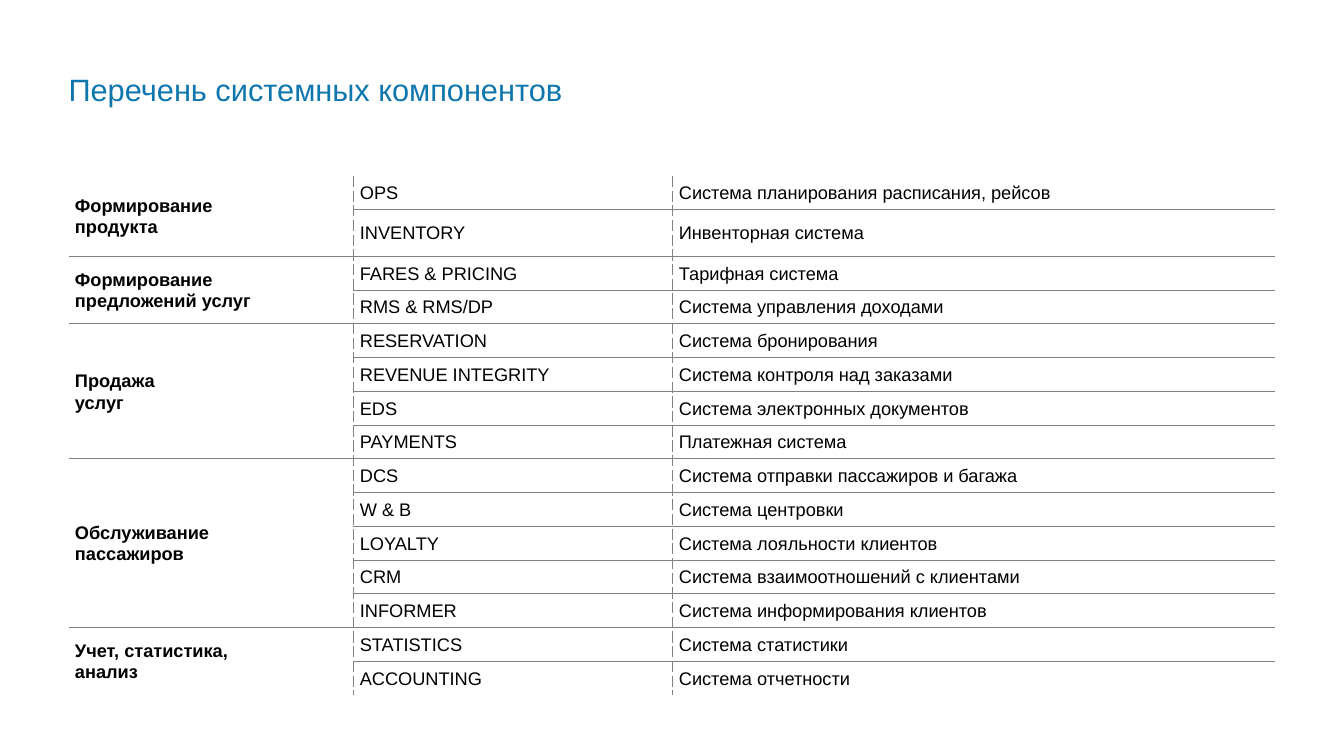
from lxml import etree
from pptx import Presentation
from pptx.dml.color import RGBColor
from pptx.enum import text
from pptx.oxml import ns
from pptx.util import Cm, Pt

TITLE = "Перечень системных компонентов"
GROUPS = [
    ("Формирование \nпродукта", [
        ("OPS", "Система планирования расписания, рейсов"),
        ("INVENTORY", "Инвенторная система"),
    ]),
    ("Формирование \nпредложений услуг", [
        ("FARES & PRICING", "Тарифная система"),
        ("RMS & RMS/DP", "Система управления доходами"),
    ]),
    ("Продажа \nуслуг", [
        ("RESERVATION", "Система бронирования"),
        ("REVENUE INTEGRITY", "Система контроля над заказами"),
        ("EDS", "Система электронных документов"),
        ("PAYMENTS", "Платежная система"),
    ]),
    ("Обслуживание \nпассажиров", [
        ("DCS", "Система отправки пассажиров и багажа"),
        ("W & B", "Система центровки"),
        ("LOYALTY", "Система лояльности клиентов"),
        ("CRM", "Система взаимоотношений с клиентами"),
        ("INFORMER", "Система информирования клиентов"),
    ]),
    ("Учет, статистика, \nанализ", [
        ("STATISTICS", "Система статистики"),
        ("ACCOUNTING", "Система отчетности"),
    ]),
]

FONT = "Arial"
BLUE = RGBColor(0x0F, 0x77, 0xAD)
BLACK = RGBColor(0, 0, 0)
WHITE = RGBColor(0xFF, 0xFF, 0xFF)
GREY = RGBColor(0x80, 0x80, 0x80)

LEFT, TABLE_TOP = Cm(1.73), Cm(4.43)
COLUMN_WIDTHS = [Cm(7.18), Cm(8.04), Cm(15.19)]
ROW_HEIGHT, TALL_ROW_HEIGHT = Cm(0.85), Cm(1.08)
TALL_ROW = 1
ROW_COUNT = sum(len(systems) for _, systems in GROUPS)


def style_font(font, size, color, bold=False):
    font.name, font.size, font.bold = FONT, Pt(size), bold
    font.color.rgb = color


def add_border(cell, side, dash):
    """Draw one cell edge; a dash of None leaves the edge empty."""
    props = cell._tc.get_or_add_tcPr()
    line = etree.SubElement(props, ns.qn(f"a:ln{side}"), w=str(Pt(0.5)))
    if dash is None:
        etree.SubElement(line, ns.qn("a:noFill"))
        return
    fill = etree.SubElement(line, ns.qn("a:solidFill"))
    etree.SubElement(fill, ns.qn("a:srgbClr"), val=str(GREY))
    etree.SubElement(line, ns.qn("a:prstDash"), val=dash)


def style_cell(cell, column, ruled_top, ruled_bottom):
    cell.margin_left = cell.margin_right = Cm(0.16)
    cell.margin_top = cell.margin_bottom = 0
    cell.vertical_anchor = text.MSO_ANCHOR.MIDDLE
    add_border(cell, "L", "sysDash" if column > 0 else None)
    add_border(cell, "R", "sysDash" if column < 2 else None)
    add_border(cell, "T", "solid" if ruled_top else None)
    add_border(cell, "B", "solid" if ruled_bottom else None)
    cell.fill.solid()
    cell.fill.fore_color.rgb = WHITE


def write_cell(cell, words, column):
    para = cell.text_frame.paragraphs[0]
    para.text = words
    para.line_spacing = 1.07
    para.alignment = text.PP_ALIGN.JUSTIFY if column else text.PP_ALIGN.LEFT
    style_font(para.font, 13, BLACK, bold=column == 0)


def add_title(page):
    box = page.shapes.add_textbox(LEFT, Cm(1.78), Cm(19.91), Cm(2.67))
    frame = box.text_frame
    frame.word_wrap = True
    frame.margin_left = frame.margin_right = 0
    frame.margin_top = frame.margin_bottom = 0
    para = frame.paragraphs[0]
    para.text = TITLE
    style_font(para.font, 22, BLUE)


def add_components(page):
    heights = [TALL_ROW_HEIGHT if row == TALL_ROW else ROW_HEIGHT
               for row in range(ROW_COUNT)]
    table = page.shapes.add_table(ROW_COUNT, len(COLUMN_WIDTHS), LEFT, TABLE_TOP,
                                  sum(COLUMN_WIDTHS), sum(heights)).table
    table.first_row = table.horz_banding = False
    for column, width in zip(table.columns, COLUMN_WIDTHS):
        column.width = width
    for row, height in zip(table.rows, heights):
        row.height = height

    first = 0
    for stage, systems in GROUPS:
        last = first + len(systems) - 1
        for row, system in enumerate(systems, first):
            style_cell(table.cell(row, 0), 0, row == first > 0,
                       row in (first, last) and last < ROW_COUNT - 1)
            for column, words in enumerate(system, 1):
                cell = table.cell(row, column)
                style_cell(cell, column, row > 0, row < ROW_COUNT - 1)
                write_cell(cell, words, column)
        table.cell(first, 0).merge(table.cell(last, 0))
        write_cell(table.cell(first, 0), stage, 0)
        first = last + 1


def main():
    deck = Presentation()
    deck.slide_width, deck.slide_height = Cm(33.87), Cm(19.05)
    page = deck.slides.add_slide(deck.slide_layouts[6])
    add_title(page)
    add_components(page)
    deck.save("out.pptx")


if __name__ == "__main__":
    main()
